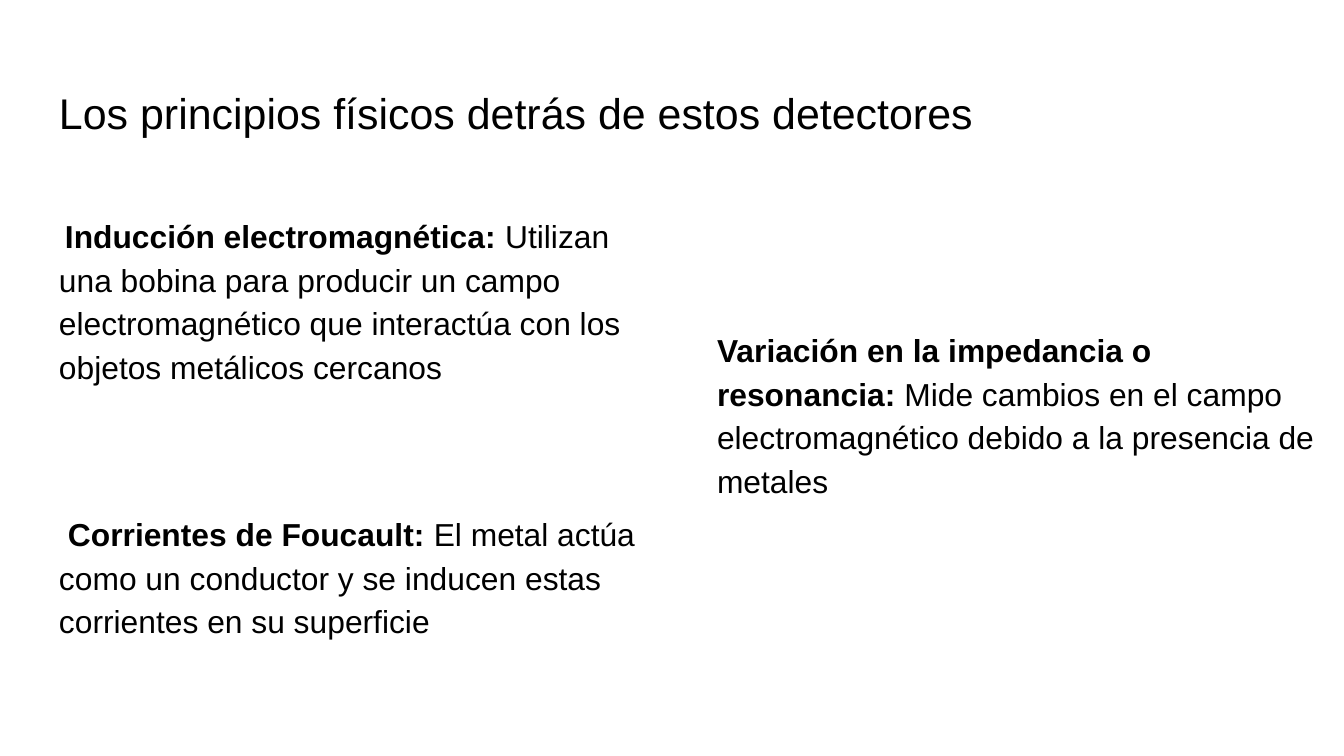
import pptx
import pptx.dml.color
import pptx.enum.text
import pptx.util
from dataclasses import dataclass

TITLE = "Los principios físicos detrás de estos detectores"
TITLE_PLACE = (46, 66, 957, 85)

# place (left, top, width, height), first-line indent, term, explanation
PRINCIPLES = [
    ((46, 198, 626, 198), 6, "Inducción electromagnética:",
     "Utilizan una bobina para producir un campo electromagnético que "
     "interactúa con los objetos metálicos cercanos"),
    ((46, 496, 626, 155), 9, "Corrientes de Foucault:",
     "El metal actúa como un conductor y se inducen estas corrientes "
     "en su superficie"),
    ((704, 312, 626, 198), 0, "Variación en la impedancia o resonancia:",
     "Mide cambios en el campo electromagnético debido a la presencia "
     "de metales"),
]


@dataclass(frozen=True)
class Theme:
    font: str = "Arial"
    ink: str = "000000"
    paper: str = "FFFFFF"
    title_size: int = 23
    body_size: int = 17
    line_spacing: float = 1.15
    inset: int = 13


THEME = Theme()


def px(count):
    return pptx.util.Emu(round(count * 914400 / 134.4))


def color(value):
    return pptx.dml.color.RGBColor.from_string(value)


def format_box(box, place, size, indent=0):
    """Place and style a box; return its first paragraph, ready for text."""
    box.left, box.top, box.width, box.height = map(px, place)
    box.fill.solid()
    box.fill.fore_color.rgb = color(THEME.paper)
    frame = box.text_frame
    frame.word_wrap = True
    frame.auto_size = pptx.enum.text.MSO_AUTO_SIZE.NONE
    frame.vertical_anchor = pptx.enum.text.MSO_ANCHOR.TOP
    frame.margin_left = frame.margin_right = px(THEME.inset)
    frame.margin_top = frame.margin_bottom = px(THEME.inset)
    para = frame.paragraphs[0]
    para.alignment = pptx.enum.text.PP_ALIGN.LEFT
    para.line_spacing = THEME.line_spacing
    if indent:
        properties = para._p.get_or_add_pPr()
        properties.set("marL", "0")
        properties.set("indent", str(px(indent)))
    para.font.name = THEME.font
    para.font.size = pptx.util.Pt(size)
    para.font.color.rgb = color(THEME.ink)
    return para


def add_principle(page, place, indent, term, explanation):
    box = page.shapes.add_textbox(*map(px, place))
    para = format_box(box, place, THEME.body_size, indent)
    for text, bold in ((term + " ", True), (explanation, False)):
        span = para.add_run()
        span.text = text
        span.font.bold = bold


def main():
    deck = pptx.Presentation()
    deck.slide_width, deck.slide_height = px(1344), px(756)
    page = deck.slides.add_slide(deck.slide_layouts.get_by_name("Title Only"))
    page.background.fill.solid()
    page.background.fill.fore_color.rgb = color(THEME.paper)
    heading = format_box(page.shapes.title, TITLE_PLACE, THEME.title_size)
    heading.add_run().text = TITLE
    for principle in PRINCIPLES:
        add_principle(page, *principle)
    deck.save("out.pptx")


if __name__ == "__main__":
    main()
